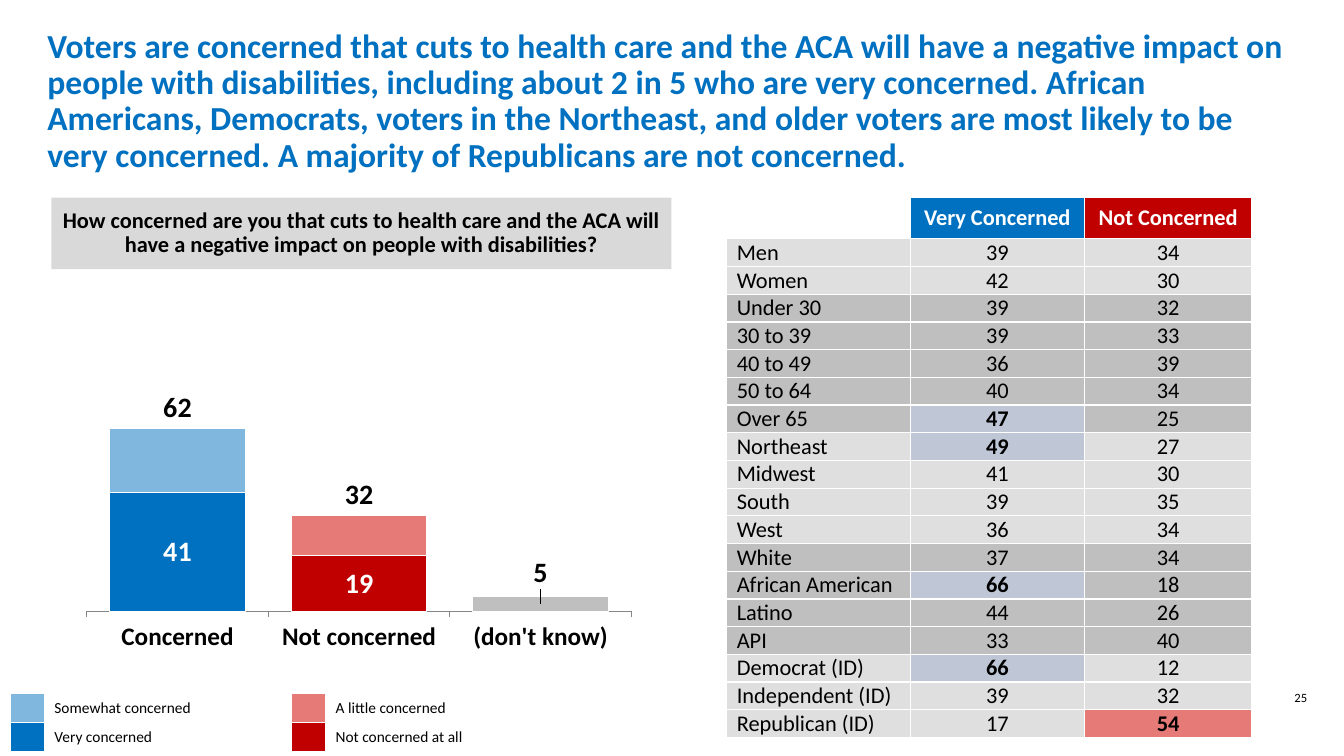
import pptx
import pptx.chart.data
import pptx.dml.color
import pptx.enum.chart
import pptx.enum.shapes
import pptx.enum.text
import pptx.oxml
import pptx.oxml.ns
import pptx.util
from dataclasses import dataclass


@dataclass(frozen=True)
class Theme:
    font: str = "Calibri"
    black: str = "000000"
    white: str = "FFFFFF"
    blue: str = "0070C0"
    light_blue: str = "80B7DF"
    pale_blue: str = "BFC7D7"
    red: str = "C00000"
    light_red: str = "E57A77"
    light_gray: str = "DFDFDF"
    gray: str = "BFBFBF"
    panel: str = "D9D9D9"
    axis: str = "868686"
    title_size: int = 24
    value_size: int = 20
    category_size: int = 18
    body_size: int = 16
    legend_size: int = 11
    page_size: int = 9


theme = Theme()
rgb = pptx.dml.color.RGBColor.from_string
CENTER = pptx.enum.text.PP_ALIGN.CENTER
MIDDLE = pptx.enum.text.MSO_ANCHOR.MIDDLE
UNIT = pptx.util.Inches(0.1)


def grid(*cells):
    return [round(UNIT * cell) for cell in cells]


def write(frame, text, size=theme.body_size, color=theme.black, bold=False,
          align=None, spacing=None):
    frame.word_wrap = True
    frame.vertical_anchor = MIDDLE
    paragraph = frame.paragraphs[0]
    paragraph.text = text
    paragraph.alignment = align
    paragraph.line_spacing = spacing
    font = paragraph.runs[0].font
    font.name, font.size, font.bold = theme.font, pptx.util.Pt(size), bold
    font.color.rgb = rgb(color)


deck = pptx.Presentation()
deck.slide_width, deck.slide_height = grid(133.33, 75)
slide = deck.slides.add_slide(deck.slide_layouts[5])

headline = slide.shapes.title
headline.left, headline.top, headline.width, headline.height = grid(3.7, 2.9, 126, 14.4)
headline.text_frame.auto_size = pptx.enum.text.MSO_AUTO_SIZE.NONE
write(headline.text_frame,
      "Voters are concerned that cuts to health care and the ACA will have a negative "
      "impact on people with disabilities, including about 2 in 5 who are very concerned. "
      "African Americans, Democrats, voters in the Northeast, and older voters are most "
      "likely to be very concerned. A majority of Republicans are not concerned.",
      size=theme.title_size, color=theme.blue, bold=True,
      align=pptx.enum.text.PP_ALIGN.LEFT, spacing=0.9)

question = slide.shapes.add_shape(pptx.enum.shapes.MSO_SHAPE.RECTANGLE,
                                  *grid(5.1, 19.6, 61.5, 7.1))
question.shadow.inherit = False
question.fill.solid()
question.fill.fore_color.rgb = rgb(theme.panel)
question.line.fill.background()
write(question.text_frame,
      "How concerned are you that cuts to health care and the ACA will have a negative "
      "impact on people with disabilities?", bold=True, align=CENTER, spacing=0.9)

concern = pptx.chart.data.CategoryChartData()
concern.categories = ["Concerned", "Not concerned", "(don't know)"]
concern.add_series("Series 1", [41, 19, 5])
concern.add_series("Series 2", [22, 14, None])
concern.add_series("Series 3", [62, 32, None])
chart = slide.shapes.add_chart(pptx.enum.chart.XL_CHART_TYPE.COLUMN_STACKED,
                               *grid(7.5, 30.1, 55.7, 35.1), concern).chart
chart.has_legend = False
chart.has_title = False
chart.font.name = theme.font
chart.font.size = pptx.util.Pt(14)
chart.font.color.rgb = rgb(theme.black)

answers = chart.category_axis
answers.format.line.color.rgb = rgb(theme.axis)
answers.major_tick_mark = pptx.enum.chart.XL_TICK_MARK.OUTSIDE
answers.tick_labels.font.size = pptx.util.Pt(theme.category_size)
answers.tick_labels.font.bold = True
percent = chart.value_axis
percent.minimum_scale, percent.maximum_scale = 0, 100
percent.has_major_gridlines = False
percent.visible = False

bars = chart.plots[0]
bars.gap_width, bars.overlap, bars.vary_by_categories = 34, 100, False
strong, mild, total = bars.series
for series, colors in ((strong, (theme.blue, theme.red, theme.gray)),
                       (mild, (theme.light_blue, theme.light_red)),
                       (total, ())):
    series.format.fill.background()
    series.format.line.color.rgb = rgb(theme.white)
    series.format.line.width = pptx.util.Pt(0.75)
    for index, color in enumerate(colors):
        segment = series.points[index].format
        segment.fill.solid()
        segment.fill.fore_color.rgb = rgb(color)
        segment.line.color.rgb = rgb(theme.white)
        segment.line.width = pptx.util.Pt(0.75)

unsure = strong.points[2].data_label
for values, color in ((strong.data_labels, theme.white),
                      (total.data_labels, theme.black), (unsure, theme.black)):
    values.font.size = pptx.util.Pt(theme.value_size)
    values.font.bold = True
    values.font.color.rgb = rgb(color)
for values in (strong.data_labels, total.data_labels):
    values.show_value = True
total.data_labels.position = pptx.enum.chart.XL_LABEL_POSITION.INSIDE_BASE

unsure_label = strong._element.xpath(".//c:dLbl")[0]
plot_area = chart._chartSpace.xpath(".//c:plotArea")[0]
for empty_layout in plot_area.xpath("./c:layout"):
    plot_area.remove(empty_layout)
for parent, position, settings in (
        (unsure_label, 1, {"x": 0, "y": -0.09}),
        (plot_area, 0, {"layoutTarget": "inner", "xMode": "edge", "yMode": "edge",
                        "x": 0.02, "y": 0.05, "w": 0.97, "h": 0.82})):
    fields = "".join(f'<c:{key} val="{value}"/>' for key, value in settings.items())
    parent.insert(position, pptx.oxml.parse_xml(
        f'<c:layout {pptx.oxml.ns.nsdecls("c")}><c:manualLayout>{fields}'
        '</c:manualLayout></c:layout>'))

legend = slide.shapes.add_table(2, 4, *grid(1, 68.8, 57, 5.7)).table
legend.first_row = legend.horz_banding = False
for column, width in zip(legend.columns, grid(3.4, 24.5, 3.4, 25.7)):
    column.width = width
legend_rows = (((theme.light_blue, "Somewhat concerned"), (theme.light_red, "A little concerned")),
               ((theme.blue, "Very concerned"), (theme.red, "Not concerned at all")))
for row, entries in enumerate(legend_rows):
    for pair, (color, meaning) in enumerate(entries):
        swatch, caption = legend.cell(row, 2 * pair), legend.cell(row, 2 * pair + 1)
        swatch.fill.solid()
        swatch.fill.fore_color.rgb = rgb(color)
        swatch.text_frame.paragraphs[0].font.size = pptx.util.Pt(theme.legend_size)
        caption.fill.background()
        write(caption.text_frame, meaning, size=theme.legend_size)

voter_groups = (
    (("Men", 39, 34), ("Women", 42, 30)),
    (("Under 30", 39, 32), ("30 to 39", 39, 33), ("40 to 49", 36, 39),
     ("50 to 64", 40, 34), ("Over 65", 47, 25)),
    (("Northeast", 49, 27), ("Midwest", 41, 30), ("South", 39, 35), ("West", 36, 34)),
    (("White", 37, 34), ("African American", 66, 18), ("Latino", 44, 26), ("API", 33, 40)),
    (("Democrat (ID)", 66, 12), ("Independent (ID)", 39, 32), ("Republican (ID)", 17, 54)),
)
voter_rows = [(("", theme.white), ("Very Concerned", theme.blue), ("Not Concerned", theme.red))]
for number, group in enumerate(voter_groups):
    shade = theme.gray if number % 2 else theme.light_gray
    for name, very, little in group:
        voter_rows.append(((name, shade),
                           (str(very), theme.pale_blue if very > 45 else shade),
                           (str(little), theme.light_red if little > 45 else shade)))

voters = slide.shapes.add_table(len(voter_rows), 3, *grid(72.1, 19.6, 52.1, 53.5)).table
voters.horz_banding = False
for column, width in zip(voters.columns, grid(18.2, 17.3, 16.6)):
    column.width = width
for row, entries in enumerate(voter_rows):
    voters.rows[row].height = grid(2.75 if row else 4.1)[0]
    for column, (text, color) in enumerate(entries):
        cell = voters.cell(row, column)
        cell.fill.solid()
        cell.fill.fore_color.rgb = rgb(color)
        cell.vertical_anchor = MIDDLE
        if row:
            cell.margin_top = cell.margin_bottom = 0
        if text:
            write(cell.text_frame, text, color=theme.black if row else theme.white,
                  bold=row == 0 or color in (theme.pale_blue, theme.light_red),
                  align=CENTER if column else None)

page = slide.shapes.add_textbox(*grid(125.3, 67.5, 7.5, 3.3))
write(page.text_frame, "25", size=theme.page_size, align=CENTER)

deck.save("out.pptx")
